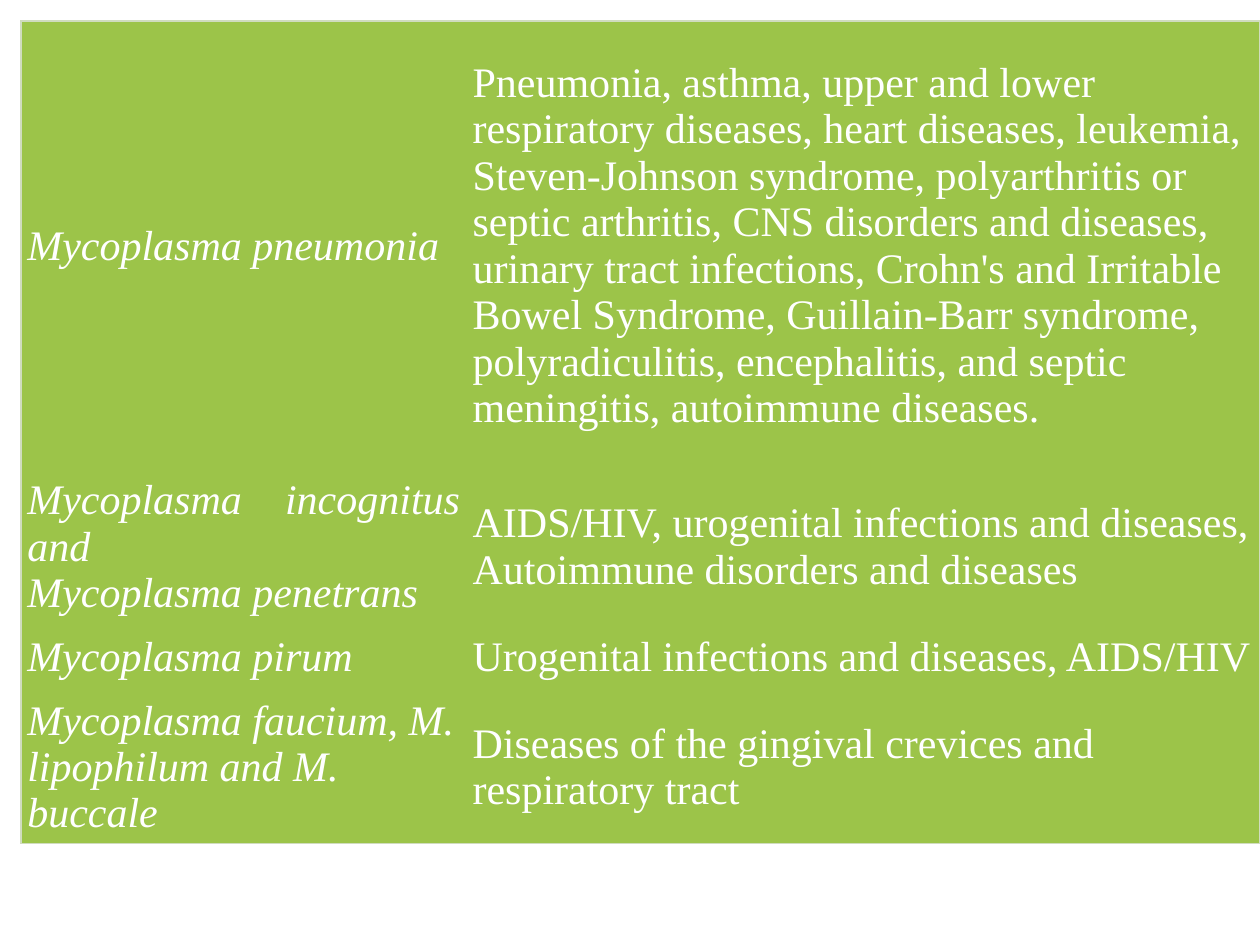
from lxml.etree import SubElement
from pptx import Presentation
from pptx.dml.color import RGBColor
from pptx.enum.text import MSO_ANCHOR, PP_ALIGN
from pptx.oxml.ns import qn
from pptx.util import Pt

ROWS = [
    ("Mycoplasma pneumonia",
     "Pneumonia, asthma, upper and lower respiratory diseases, heart diseases, leukemia, "
     "Steven-Johnson syndrome, polyarthritis or septic arthritis, CNS disorders and diseases, "
     "urinary tract infections, Crohn's and Irritable Bowel Syndrome, Guillain-Barr syndrome, "
     "polyradiculitis, encephalitis, and septic meningitis, autoimmune diseases."),
    ("Mycoplasma incognitus and\vMycoplasma penetrans",
     "AIDS/HIV, urogenital infections and diseases, Autoimmune disorders and diseases"),
    ("Mycoplasma pirum", "Urogenital infections and diseases, AIDS/HIV"),
    ("Mycoplasma faucium, M. lipophilum and M. buccale",
     "Diseases of the gingival crevices and respiratory tract"),
]
JUSTIFIED = {(1, 0)}
COL_WIDTHS = [254.5, 453.5]
ROW_HEIGHTS = [257, 87, 39, 87]
LEFT = TOP = 12
MARGIN = 3.6
THEME = {"font": "Times New Roman", "size": 24, "text": "FFFFFF",
         "fill": "9CC449", "border": "D0DCBF", "border_width": 0.75}
NO_STYLE = "{2D5ABB26-0587-4C30-8999-92F81FD0307C}"


def write_text(cell, text, italic=False, align=PP_ALIGN.LEFT):
    cell.text = text
    cell.vertical_anchor = MSO_ANCHOR.MIDDLE
    cell.margin_left = cell.margin_right = Pt(MARGIN)
    cell.margin_top = cell.margin_bottom = Pt(MARGIN)
    p = cell.text_frame.paragraphs[0]
    p.alignment = align
    for r in p.runs:
        r.font.name = THEME["font"]
        r.font.size = Pt(THEME["size"])
        r.font.italic = italic
        r.font.color.rgb = RGBColor.from_string(THEME["text"])


def add_borders(cell, sides):
    tc_pr = cell._tc.get_or_add_tcPr()
    for side, shown in sides.items():
        ln = SubElement(tc_pr, qn(f"a:ln{side}"), w=str(Pt(THEME["border_width"])))
        if shown:
            fill = SubElement(ln, qn("a:solidFill"))
            SubElement(fill, qn("a:srgbClr"), val=THEME["border"])
        else:
            SubElement(ln, qn("a:noFill"))


def main():
    prs = Presentation()
    prs.slide_width, prs.slide_height = Pt(720), Pt(540)
    slide = prs.slides.add_slide(prs.slide_layouts[6])
    frame = slide.shapes.add_table(len(ROWS), len(COL_WIDTHS), Pt(LEFT), Pt(TOP),
                                   Pt(sum(COL_WIDTHS)), Pt(sum(ROW_HEIGHTS)))
    table = frame.table
    table.first_row = table.horz_banding = False
    table._tbl.tblPr.find(qn("a:tableStyleId")).text = NO_STYLE
    for column, width in zip(table.columns, COL_WIDTHS):
        column.width = Pt(width)
    for row, height in zip(table.rows, ROW_HEIGHTS):
        row.height = Pt(height)

    last_row, last_col = len(ROWS) - 1, len(COL_WIDTHS) - 1
    for i, texts in enumerate(ROWS):
        for j, text in enumerate(texts):
            cell = table.cell(i, j)
            align = PP_ALIGN.JUSTIFY if (i, j) in JUSTIFIED else PP_ALIGN.LEFT
            write_text(cell, text, italic=j == 0, align=align)
            add_borders(cell, {"L": j == 0, "R": j == last_col,
                               "T": i == 0, "B": i == last_row})
            cell.fill.solid()
            cell.fill.fore_color.rgb = RGBColor.from_string(THEME["fill"])
    prs.save("out.pptx")


if __name__ == "__main__":
    main()
